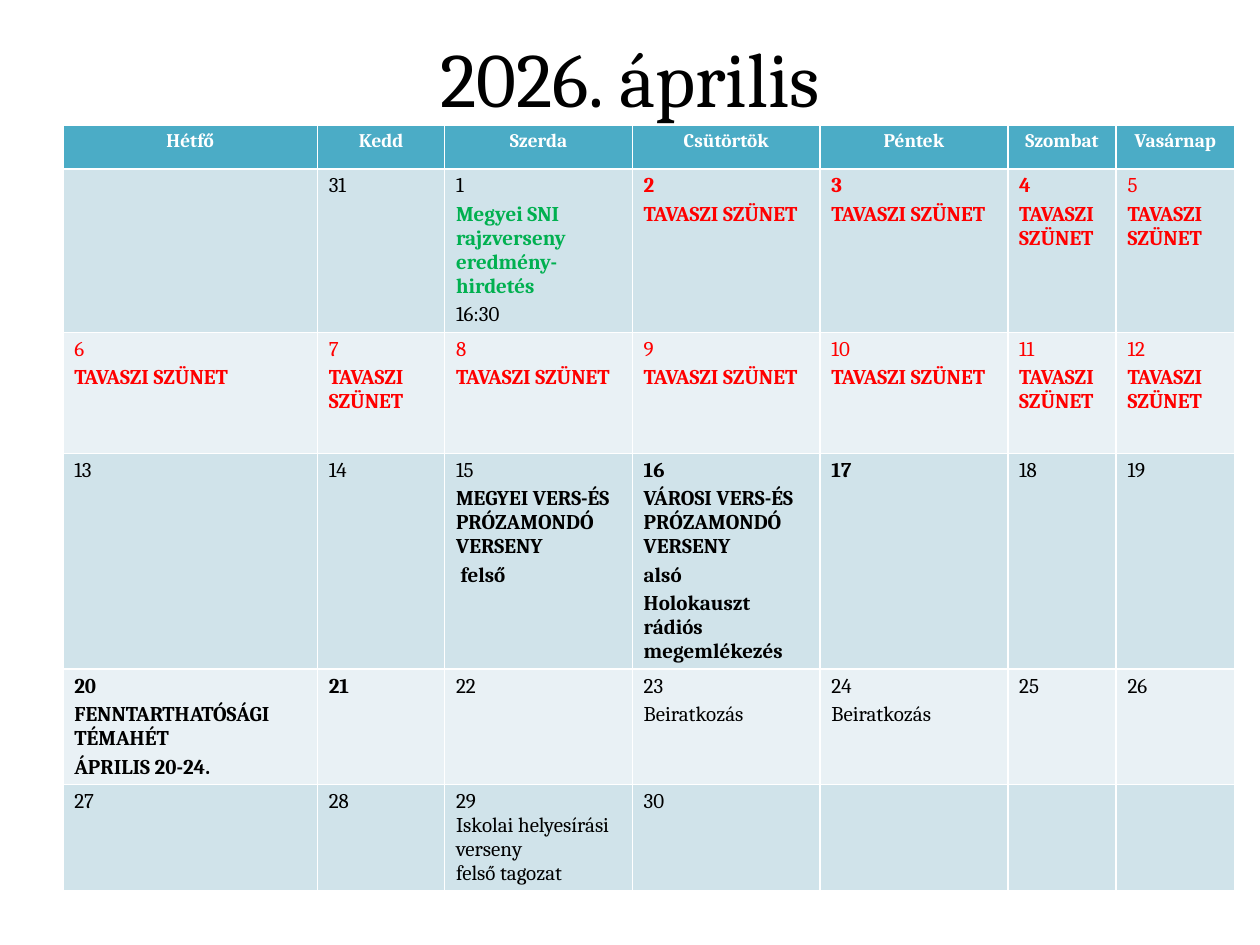
from dataclasses import dataclass

from pptx import Presentation
from pptx.dml.color import RGBColor
from pptx.enum.text import MSO_ANCHOR, PP_ALIGN
from pptx.util import Inches, Pt

LEFT, CENTER = PP_ALIGN.LEFT, PP_ALIGN.CENTER
MIDDLE = MSO_ANCHOR.MIDDLE
FONT = "Cambria"
HEX = {
    "black": "000000", "white": "FFFFFF", "red": "FF0000", "green": "00B050",
    "head": "4BACC6", "dark": "D0E3EA", "light": "E9F1F5",
}
DAYS = ["Hétfő", "Kedd", "Szerda", "Csütörtök", "Péntek", "Szombat", "Vasárnap"]
WIDTHS = [2.02, 1.01, 1.49, 1.49, 1.49, 0.86, 0.94]
HEIGHTS = [0.35, 0.93, 0.96, 0.77, 0.85, 0.75]
SHIFT = 1  # day 0 (31 March) falls on a Tuesday
LAST = 30
BREAK = range(2, 13)  # spring holiday
BOLD = {2, 3, 4, 16, 17, 20, 21}  # dates set in bold
TIGHT = {29}  # dates whose lines have no gap


@dataclass
class Note:
    text: str
    bold: bool = True
    color: str = "black"


NOTES = {
    1: [Note("Megyei SNI rajzverseny eredmény-hirdetés", color="green"),
        Note("16:30", bold=False)],
    15: [Note("MEGYEI VERS-ÉS PRÓZAMONDÓ VERSENY"), Note(" felső")],
    16: [Note("VÁROSI VERS-ÉS PRÓZAMONDÓ VERSENY"), Note("alsó"),
         Note("Holokauszt rádiós megemlékezés")],
    20: [Note("FENNTARTHATÓSÁGI TÉMAHÉT"), Note("ÁPRILIS 20-24.")],
    23: [Note("Beiratkozás", bold=False)],
    24: [Note("Beiratkozás", bold=False)],
    29: [Note("Iskolai helyesírási verseny", bold=False),
         Note("felső tagozat", bold=False)],
}
NOTES.update({day: [Note("TAVASZI SZÜNET", color="red")] for day in BREAK})


def write(para, text: str, *, size: float = 12, bold: bool = False,
          color: str = "black", align=LEFT, gap: float = 0) -> None:
    para.alignment = align
    if gap:
        para.space_before = Pt(gap)
    run = para.add_run()
    run.text = text
    run.font.name = FONT
    run.font.size = Pt(size)
    run.font.bold = bold
    run.font.color.rgb = RGBColor.from_string(HEX[color])


def paint(cell, color: str) -> None:
    cell.fill.solid()
    cell.fill.fore_color.rgb = RGBColor.from_string(HEX[color])
    cell.margin_left = cell.margin_right = Inches(0.09)
    cell.margin_top = cell.margin_bottom = Inches(0.04)


def fill_day(cell, day: int) -> None:
    frame = cell.text_frame
    write(frame.paragraphs[0], str(day or 31), bold=day in BOLD,
          color="red" if day in BREAK else "black")
    for note in NOTES.get(day, []):
        write(frame.add_paragraph(), note.text, bold=note.bold,
              color=note.color, gap=0 if day in TIGHT else 2.4)


def draw_title(slide) -> None:
    title = slide.shapes.title
    title.left, title.top = Inches(0.5), Inches(-0.34)
    title.width, title.height = Inches(9), Inches(1.9)
    title.text_frame.vertical_anchor = MIDDLE
    write(title.text_frame.paragraphs[0], "2026. április", size=44, align=CENTER)


def draw_month(slide) -> None:
    table = slide.shapes.add_table(
        len(HEIGHTS), len(WIDTHS), Inches(0.5), Inches(0.99),
        Inches(sum(WIDTHS)), Inches(sum(HEIGHTS))).table
    for col, width in zip(table.columns, WIDTHS):
        col.width = Inches(width)
    for row, height in zip(table.rows, HEIGHTS):
        row.height = Inches(height)

    # Cell fills: header, then alternating weeks
    for index, row in enumerate(table.rows):
        shade = "head" if index == 0 else "dark" if index % 2 else "light"
        for cell in row.cells:
            paint(cell, shade)

    # Weekday names
    for col, name in enumerate(DAYS):
        write(table.cell(0, col).text_frame.paragraphs[0], name, size=11,
              bold=True, color="white", align=CENTER)

    # Dates
    for day in range(LAST + 1):
        week, col = divmod(day + SHIFT, len(DAYS))
        fill_day(table.cell(week + 1, col), day)


def main() -> None:
    deck = Presentation()
    deck.slide_width, deck.slide_height = Inches(10), Inches(7.5)
    slide = deck.slides.add_slide(deck.slide_layouts[5])
    draw_title(slide)
    draw_month(slide)
    deck.save("out.pptx")


if __name__ == "__main__":
    main()
